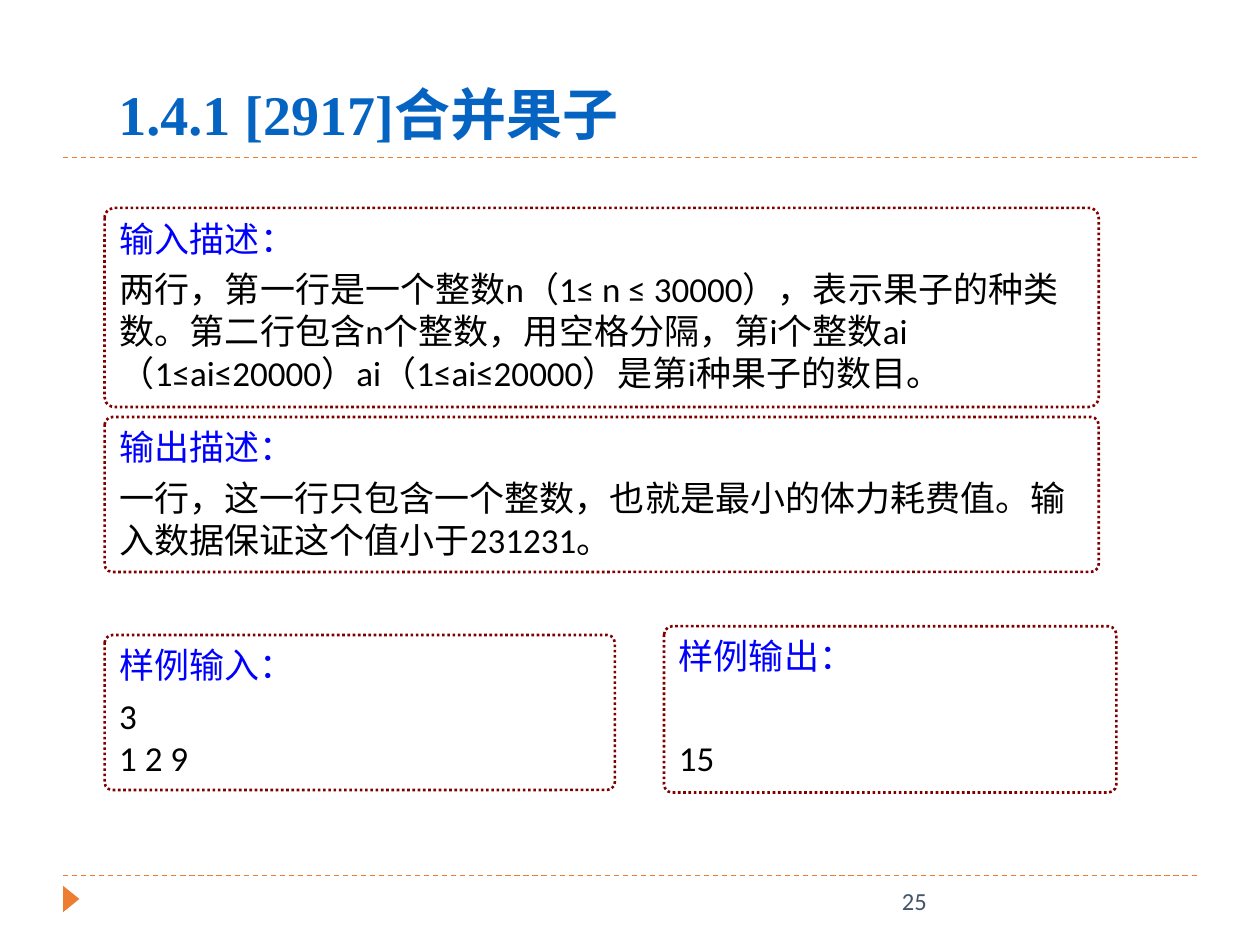
from lxml.etree import SubElement
from pptx import Presentation
from pptx.dml.color import RGBColor as Rgb
from pptx.enum.dml import MSO_LINE as Dash
from pptx.enum.shapes import MSO_CONNECTOR as Link, MSO_SHAPE as Kind
from pptx.enum.text import MSO_ANCHOR as Anchor, PP_ALIGN as Align
from pptx.oxml.ns import qn
from pptx.util import Inches, Pt

COLS, ROWS = 100, 75
WIDE, HIGH = Inches(10), Inches(7.5)
HUES = {"rule": "ED7D31", "edge": "800000", "fill": "FFFFFF", "head": "0000FF",
        "text": "000000", "title": "0563C1", "page": "44546A"}
PANELS = [
    ((8.3, 16.5, 78.9, 15.8), "输入描述：",
     ["两行，第一行是一个整数n（1≤ n ≤ 30000），表示果子的种类数。第二行包含n个整数，"
      "用空格分隔，第i个整数ai（1≤ai≤20000）ai（1≤ai≤20000）是第i种果子的数目。"], 0),
    ((8.3, 33.1, 78.9, 12.3), "输出描述：",
     ["一行，这一行只包含一个整数，也就是最小的体力耗费值。输入数据保证这个值小于231231。"], 0),
    ((52.7, 49.7, 35.9, 13.2), "样例输出：", ["15"], 29),
    ((8.3, 50.4, 40.5, 12.3), "样例输入：", ["3", "1 2 9"], 0),
]


def hue(name):
    """Return a named colour."""
    return Rgb.from_string(HUES[name])


def place(box):
    """Turn grid columns and rows into slide lengths."""
    x, y, w, h = box
    return [round(v) for v in (x * WIDE / COLS, y * HIGH / ROWS,
                               w * WIDE / COLS, h * HIGH / ROWS)]


def write(par, text, size, face, tint, bold=False):
    """Fill a paragraph and set its font."""
    par.text = text
    par.alignment = Align.LEFT
    font = par.font
    font.size, font.name, font.bold = Pt(size), face, bold
    font.color.rgb = hue(tint)


def add_title(slide, box, text):
    """Place the slide title."""
    title = slide.shapes.title
    title.left, title.top, title.width, title.height = place(box)
    frame = title.text_frame
    frame.word_wrap = True
    frame.vertical_anchor = Anchor.MIDDLE
    frame.margin_left = Inches(0.33)
    write(frame.paragraphs[0], text, 32, "Times New Roman", "title", True)


def add_rule(slide, box):
    """Draw a dashed rule along the top of the box."""
    x, y, w, h = place(box)
    rule = slide.shapes.add_connector(Link.STRAIGHT, x, y, x + w, y)
    rule.line.color.rgb = hue("rule")
    rule.line.width = Pt(0.75)
    rule.line.dash_style = Dash.DASH
    SubElement(rule._element.spPr, qn("a:effectLst"))


def add_panel(slide, box, head, lines, gap):
    """Draw a dotted panel with a heading and its lines."""
    panel = slide.shapes.add_shape(Kind.ROUNDED_RECTANGLE, *place(box))
    panel.adjustments[0] = 0.05
    panel.shadow.inherit = False
    panel.fill.solid()
    panel.fill.fore_color.rgb = hue("fill")
    panel.line.color.rgb = hue("edge")
    panel.line.width = Pt(1.5)
    panel.line.dash_style = Dash.ROUND_DOT
    frame = panel.text_frame
    frame.word_wrap = True
    frame.vertical_anchor = Anchor.TOP
    first = frame.paragraphs[0]
    write(first, head, 20, "Arial", "head")
    first.space_after = Pt(5)
    for line in lines:
        par = frame.add_paragraph()
        write(par, line, 20, "Calibri", "text")
        par.space_before = Pt(gap)


def add_foot(slide, box, page):
    """Draw the footer rule, marker and page number."""
    x, y, w, h = box
    add_rule(slide, box)
    mark = slide.shapes.add_shape(Kind.ISOSCELES_TRIANGLE,
                                  *place((x - 0.4, y + 1.2, 2.1, 1.3)))
    mark.rotation = 90
    mark.shadow.inherit = False
    mark.fill.solid()
    mark.fill.fore_color.rgb = hue("rule")
    mark.line.fill.background()
    note = slide.shapes.add_textbox(*place((x + 65.6, y, w / 4, h)))
    frame = note.text_frame
    frame.word_wrap = True
    frame.vertical_anchor = Anchor.MIDDLE
    write(frame.paragraphs[0], page, 14, "Calibri", "page")


def main():
    """Build and save the slide."""
    deck = Presentation()
    deck.slide_width, deck.slide_height = WIDE, HIGH
    slide = deck.slides.add_slide(deck.slide_layouts[5])
    add_rule(slide, (5, 12.5, 90, 0))
    add_title(slide, (6.1, 5.8, 60.4, 6.4), "1.4.1 [2917]合并果子")
    for panel in PANELS:
        add_panel(slide, *panel)
    add_foot(slide, (5, 69.5, 90, 4), "25")
    deck.save("out.pptx")


if __name__ == "__main__":
    main()
